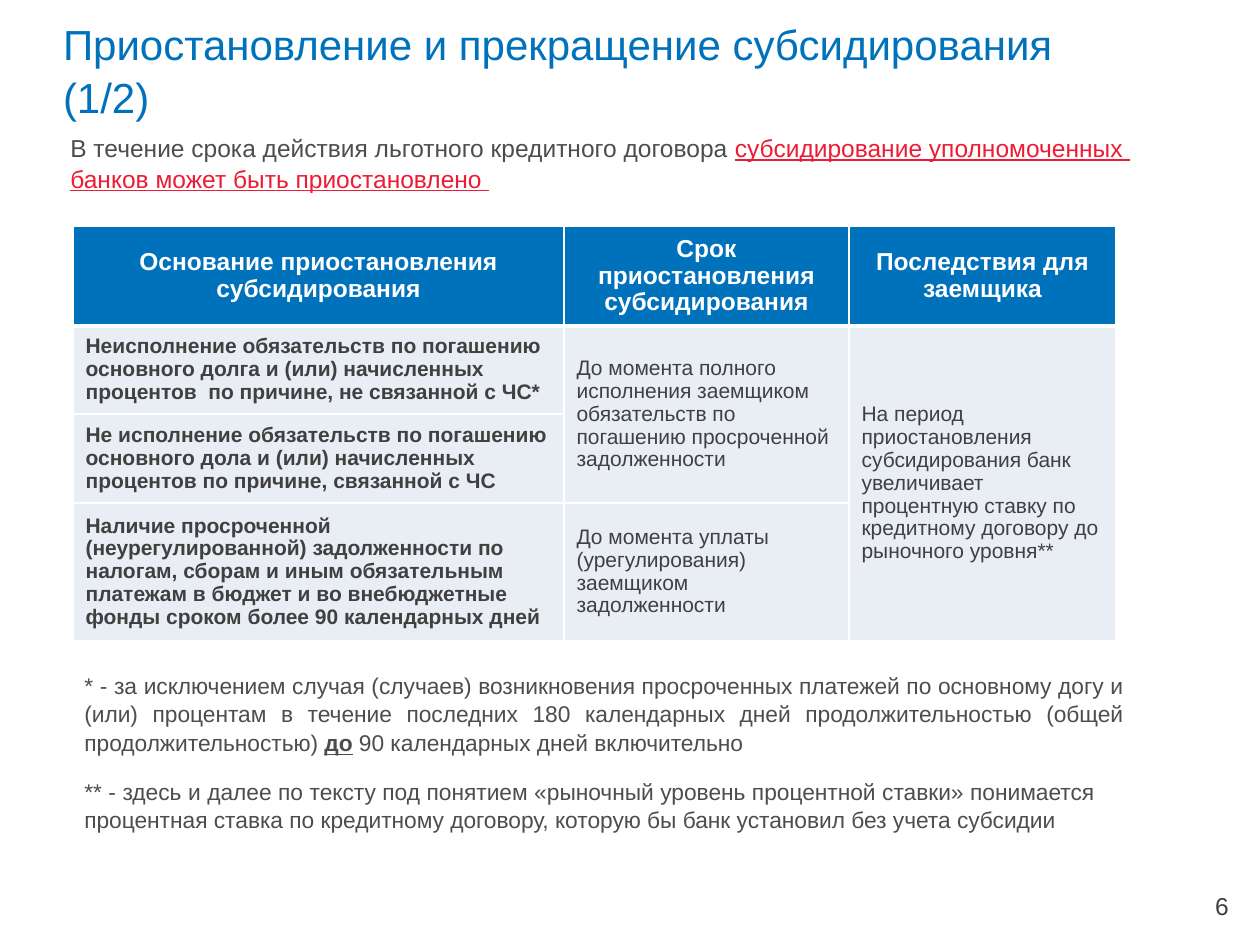
"""Build the slide on suspending and ending loan subsidies."""
from dataclasses import dataclass
from typing import Optional

import lxml.etree
import pptx
import pptx.dml.color
import pptx.enum.text
import pptx.oxml.ns
import pptx.util

ALIGN = pptx.enum.text.PP_ALIGN
ANCHOR = pptx.enum.text.MSO_ANCHOR
EMU_PER_PX = 914400 / 126


@dataclass(frozen=True)
class Theme:
    font: str = "Arial"
    blue: str = "0072BC"
    red: str = "ED1B34"
    grey: str = "4D4D4D"
    dark: str = "404040"
    white: str = "FFFFFF"
    pale: str = "E9EDF4"
    title_size: int = 24
    text_size: int = 14
    note_size: int = 13
    cell_size: int = 12
    text_spacing: float = 1.05
    cell_spacing: float = 0.97
    grid_line: int = 1
    header_line: int = 3


THEME = Theme()


@dataclass(frozen=True)
class Span:
    text: str
    color: str = THEME.grey
    bold: bool = False
    underline: bool = False


@dataclass(frozen=True)
class Passage:
    box: tuple[int, int, int, int]
    lines: list[list[Span]]
    size: int
    align: ALIGN = ALIGN.LEFT
    anchor: ANCHOR = ANCHOR.TOP


@dataclass(frozen=True)
class Entry:
    row: int
    column: int
    text: str
    bold: bool = False
    last_row: Optional[int] = None


TITLE = "Приостановление и прекращение субсидирования (1/2)"
TITLE_BOX = (63, 16, 1063, 120)

PASSAGES = [
    Passage((58, 125, 1169, 72), [
        [Span("В течение срока действия льготного кредитного договора "),
         Span("субсидирование уполномоченных ", THEME.red, underline=True)],
        [Span("банков может быть приостановлено ", THEME.red, underline=True)],
    ], THEME.text_size),
    Passage((72, 664, 1063, 96), [[
        Span("* - за исключением случая (случаев) возникновения просроченных платежей "
             "по основному догу и (или) процентам в течение последних 180 календарных "
             "дней продолжительностью (общей продолжительностью) "),
        Span("до", bold=True, underline=True),
        Span(" 90 календарных дней включительно"),
    ]], THEME.note_size, ALIGN.JUSTIFY),
    Passage((72, 770, 1034, 96), [[
        Span("** - здесь и далее по тексту под понятием «рыночный уровень процентной "
             "ставки» понимается процентная ставка по кредитному договору, которую бы "
             "банк установил без учета субсидии"),
    ]], THEME.note_size, ALIGN.JUSTIFY),
    Passage((948, 880, 293, 50), [[Span("6", THEME.dark)]],
            THEME.text_size, ALIGN.RIGHT, ANCHOR.MIDDLE),
]

TABLE_LEFT, TABLE_TOP = 73, 226
COLUMN_WIDTHS = [491, 285, 267]
ROW_HEIGHTS = [100, 88, 89, 138]
ENTRIES = [
    Entry(0, 0, "Основание приостановления субсидирования", True),
    Entry(0, 1, "Срок приостановления субсидирования", True),
    Entry(0, 2, "Последствия для заемщика", True),
    Entry(1, 0, "Неисполнение обязательств по погашению основного долга и (или) "
                "начисленных процентов  по причине, не связанной с ЧС*", True),
    Entry(1, 1, "До момента полного исполнения заемщиком обязательств по погашению "
                "просроченной задолженности", last_row=2),
    Entry(1, 2, "На период приостановления субсидирования банк увеличивает процентную "
                "ставку по кредитному договору до рыночного уровня**", last_row=3),
    Entry(2, 0, "Не исполнение обязательств по погашению основного дола и (или) "
                "начисленных процентов по причине, связанной с ЧС", True),
    Entry(3, 0, "Наличие просроченной (неурегулированной) задолженности по налогам, "
                "сборам и иным обязательным платежам в бюджет и во внебюджетные фонды "
                "сроком более 90 календарных дней", True),
    Entry(3, 1, "До момента уплаты (урегулирования) заемщиком задолженности"),
]


def px(length: int) -> pptx.util.Emu:
    return pptx.util.Emu(round(length * EMU_PER_PX))


def rgb(color: str) -> pptx.dml.color.RGBColor:
    return pptx.dml.color.RGBColor.from_string(color)


def style_font(font, size: int, color: str, bold: bool = False) -> None:
    font.name = THEME.font
    font.size = pptx.util.Pt(size)
    font.bold = bold
    font.color.rgb = rgb(color)


def draw_title(slide) -> None:
    title = slide.shapes.title
    title.left, title.top, title.width, title.height = map(px, TITLE_BOX)
    frame = title.text_frame
    frame.text = TITLE
    frame.word_wrap = True
    frame.auto_size = pptx.enum.text.MSO_AUTO_SIZE.NONE
    frame.vertical_anchor = ANCHOR.TOP
    frame.margin_left = frame.margin_right = frame.margin_top = frame.margin_bottom = 0
    heading = frame.paragraphs[0]
    heading.alignment = ALIGN.LEFT
    heading.line_spacing = THEME.text_spacing
    style_font(heading.runs[0].font, THEME.title_size, THEME.blue)


def draw_passage(slide, passage: Passage) -> None:
    frame = slide.shapes.add_textbox(*map(px, passage.box)).text_frame
    frame.word_wrap = True
    frame.vertical_anchor = passage.anchor
    for index, spans in enumerate(passage.lines):
        line = frame.add_paragraph() if index else frame.paragraphs[0]
        line.alignment = passage.align
        line.line_spacing = THEME.text_spacing
        for span in spans:
            run = line.add_run()
            run.text = span.text
            style_font(run.font, passage.size, span.color, span.bold)
            run.font.underline = span.underline


def draw_borders(cell, row: int) -> None:
    properties = cell._tc.get_or_add_tcPr()
    qn = pptx.oxml.ns.qn
    thick_side = {0: "B", 1: "T"}.get(row)
    for side in "LRTB":
        points = THEME.header_line if side == thick_side else THEME.grid_line
        line = lxml.etree.SubElement(
            properties, qn(f"a:ln{side}"), w=str(pptx.util.Pt(points)))
        fill = lxml.etree.SubElement(line, qn("a:solidFill"))
        lxml.etree.SubElement(fill, qn("a:srgbClr"), val=THEME.white)


def draw_table(slide) -> None:
    conditions = slide.shapes.add_table(
        len(ROW_HEIGHTS), len(COLUMN_WIDTHS), px(TABLE_LEFT), px(TABLE_TOP),
        px(sum(COLUMN_WIDTHS)), px(sum(ROW_HEIGHTS))).table
    for column, width in zip(conditions.columns, COLUMN_WIDTHS):
        column.width = px(width)
    for index, height in enumerate(ROW_HEIGHTS):
        conditions.rows[index].height = px(height)
        for cell in conditions.rows[index].cells:
            draw_borders(cell, index)
            cell.fill.solid()
            cell.fill.fore_color.rgb = rgb(THEME.pale if index else THEME.blue)
            cell.vertical_anchor = ANCHOR.MIDDLE
    for entry in ENTRIES:
        cell = conditions.cell(entry.row, entry.column)
        if entry.last_row:
            cell.merge(conditions.cell(entry.last_row, entry.column))
        cell.text_frame.text = entry.text
        wording = cell.text_frame.paragraphs[0]
        wording.alignment = ALIGN.LEFT if entry.row else ALIGN.CENTER
        wording.line_spacing = THEME.cell_spacing
        style_font(wording.runs[0].font,
                   THEME.cell_size if entry.row else THEME.text_size,
                   THEME.dark if entry.row else THEME.white, entry.bold)


def main() -> None:
    deck = pptx.Presentation()
    deck.slide_width, deck.slide_height = px(1260), px(945)
    slide = deck.slides.add_slide(deck.slide_layouts.get_by_name("Title Only"))
    draw_title(slide)
    draw_table(slide)
    for passage in PASSAGES:
        draw_passage(slide, passage)
    deck.save("out.pptx")


if __name__ == "__main__":
    main()
